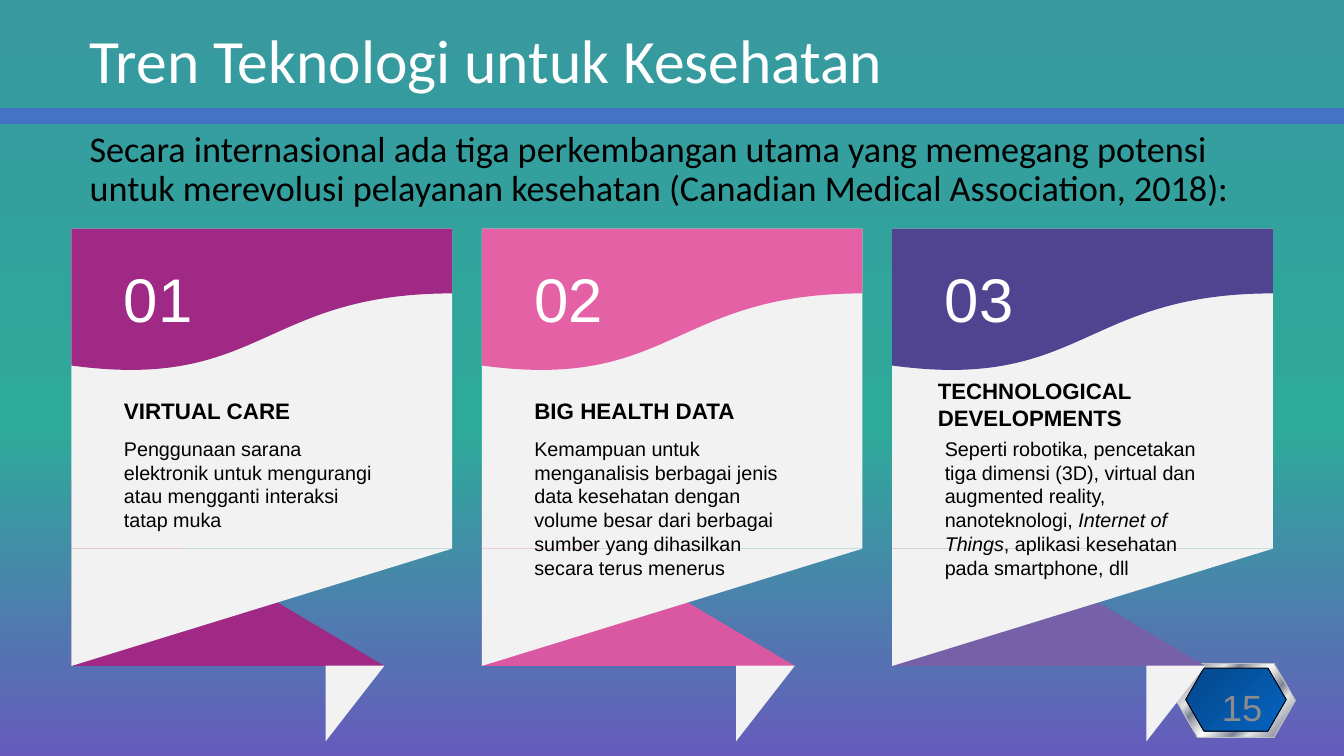
from lxml import etree
from pptx import Presentation
from pptx.dml.color import RGBColor
from pptx.enum.shapes import MSO_SHAPE
from pptx.enum.text import MSO_ANCHOR, MSO_AUTO_SIZE, PP_ALIGN
from pptx.oxml.ns import qn
from pptx.util import Cm, Pt

RECTANGLE, HEXAGON, TRIANGLE = MSO_SHAPE.RECTANGLE, MSO_SHAPE.HEXAGON, MSO_SHAPE.RIGHT_TRIANGLE
TOP, MIDDLE = MSO_ANCHOR.TOP, MSO_ANCHOR.MIDDLE
LEFT, RIGHT = PP_ALIGN.LEFT, PP_ALIGN.RIGHT
NO_AUTOFIT = MSO_AUTO_SIZE.NONE

WHITE = RGBColor(0xFF, 0xFF, 0xFF)
BLACK = RGBColor(0x00, 0x00, 0x00)
GREY = RGBColor(0x8C, 0x8C, 0x8C)
SILVER = RGBColor(0xC0, 0xC0, 0xC0)
PAPER = RGBColor(0xF2, 0xF2, 0xF2)
BLUE = RGBColor(0x44, 0x72, 0xC4)
PURPLE = RGBColor(0x9F, 0x29, 0x84)
PINK = RGBColor(0xE5, 0x61, 0xA6)
DARK_PINK = RGBColor(0xDA, 0x57, 0xA1)
INDIGO = RGBColor(0x50, 0x44, 0x90)
LILAC = RGBColor(0x76, 0x60, 0xA8)
LIGHT_STEEL = RGBColor(0xE6, 0xE6, 0xE6)
DARK_STEEL = RGBColor(0x7D, 0x84, 0x96)
NAVY = RGBColor(0x04, 0x47, 0x8A)
ROYAL = RGBColor(0x05, 0x63, 0xC1)

BACKGROUND = [(0, RGBColor(0x38, 0x99, 0x9F)), (57, RGBColor(0x2D, 0xAA, 0x9A)),
              (100, RGBColor(0x66, 0x5B, 0xBC))]
STEEL = [(0, LIGHT_STEEL), (8, DARK_STEEL), (26, LIGHT_STEEL), (34, DARK_STEEL),
         (46, LIGHT_STEEL), (50, WHITE), (54, LIGHT_STEEL), (66, DARK_STEEL),
         (74, LIGHT_STEEL), (92, DARK_STEEL), (100, LIGHT_STEEL)]

CARD_LEFT, CARD_PITCH, CARD_WIDTH = 2.04, 11.72, 10.87
CARD_TOP, CARD_SIDE, CARD_BOTTOM = 6.53, 15.67, 19.02
WAVE_RIGHT, WAVE_DIP, WAVE_LOWEST, WAVE_LEFT = 8.38, 11.18, 10.57, 10.44
TEXT_INDENT = 1.25


def write(frame, text, size, color, font="Arial", bold=False, align=LEFT,
          anchor=TOP, wrap=True, spacing=1.0):
    """Fill a text frame; every second part of text split by * is italic."""
    frame.word_wrap = wrap
    frame.auto_size = NO_AUTOFIT
    frame.vertical_anchor = anchor
    paragraph = frame.paragraphs[0]
    paragraph.alignment = align
    paragraph.line_spacing = spacing
    for index, part in enumerate(text.split("*")):
        run = paragraph.add_run()
        run.text = part
        run.font.name, run.font.size, run.font.bold = font, Pt(size), bold
        run.font.italic = index % 2 == 1
        run.font.color.rgb = color


def set_gradient(owner, fill, stops, angle):
    """Give the fill of a slide or shape any number of (percent, colour) stops."""
    fill.gradient()
    gradient = owner.element.find(".//" + qn("a:gradFill"))
    stop_list = gradient.find(qn("a:gsLst"))
    for stop in list(stop_list):
        stop_list.remove(stop)
    for percent, color in stops:
        stop = etree.SubElement(stop_list, qn("a:gs"), pos=str(percent * 1000))
        etree.SubElement(stop, qn("a:srgbClr"), val=str(color))
    gradient.find(qn("a:lin")).set("ang", str(angle * 60000))


def curve_last_lines(shape, points):
    """Turn the last two lines of a freeform into one cubic curve through points."""
    lines = shape.element.findall(".//" + qn("a:lnTo"))[-2:]
    curve = etree.Element(qn("a:cubicBezTo"))
    for x, y in points:
        etree.SubElement(curve, qn("a:pt"), x=str(Cm(x) - shape.left), y=str(Cm(y) - shape.top))
    lines[0].addprevious(curve)
    for line in lines:
        line.getparent().remove(line)


class TrendSlide:
    def __init__(self, presentation):
        self.slide = presentation.slides.add_slide(presentation.slide_layouts[5])
        self.shapes = self.slide.shapes
        set_gradient(self.slide, self.slide.background.fill, BACKGROUND, 90)

    def begin_group(self):
        self.shapes = self.slide.shapes.add_group_shape().shapes

    def end_group(self):
        self.shapes = self.slide.shapes

    def title(self, text, left, top, width, height, **style):
        title = self.slide.shapes.title
        title.left, title.top, title.width, title.height = map(Cm, (left, top, width, height))
        write(title.text_frame, text, **style)

    def text(self, text, left, top, width, height, **style):
        box = self.shapes.add_textbox(Cm(left), Cm(top), Cm(width), Cm(height))
        write(box.text_frame, text, **style)

    def shape(self, kind, left, top, width, height, color, rotation=0, flip=False):
        shape = self.shapes.add_shape(kind, Cm(left), Cm(top), Cm(width), Cm(height))
        self.paint(shape, color)
        shape.rotation = rotation
        if flip:
            shape.element.spPr.find(qn("a:xfrm")).set("flipV", "1")
        return shape

    def paint(self, shape, color):
        shape.shadow.inherit = False
        shape.fill.solid()
        shape.fill.fore_color.rgb = color
        shape.line.fill.background()

    def hexagon(self, left, top, width, height, stops, outline):
        hexagon = self.shape(HEXAGON, left, top, width, height, WHITE)
        hexagon.adjustments[0], hexagon.adjustments[1] = 0.289, 1.155
        set_gradient(hexagon, hexagon.fill, stops, 45)
        hexagon.line.color.rgb = outline
        hexagon.line.width = Pt(0.75)

    def wave(self, left, color):
        right, middle = left + CARD_WIDTH, left + CARD_WIDTH / 2
        corners = [(right, CARD_TOP), (right, WAVE_RIGHT), (middle, WAVE_LOWEST), (left, WAVE_LEFT)]
        builder = self.shapes.build_freeform(Cm(left), Cm(CARD_TOP), scale=1.0)
        builder.add_line_segments([(Cm(x), Cm(y)) for x, y in corners])
        wave = builder.convert_to_shape()
        curve_last_lines(wave, [(middle, WAVE_RIGHT), (middle, WAVE_DIP), (left, WAVE_LEFT)])
        self.paint(wave, color)

    def card(self, left, number, heading, heading_box, body, body_height, color, fold_color):
        self.begin_group()
        text_left = left + TEXT_INDENT
        heading_shift, heading_top, heading_width, heading_height, heading_size = heading_box
        self.shape(TRIANGLE, left, 13.72, 8.94, CARD_BOTTOM - 13.72, fold_color)
        self.shape(RECTANGLE, left, CARD_TOP, CARD_WIDTH, CARD_SIDE - CARD_TOP, PAPER)
        self.wave(left, color)
        self.shape(TRIANGLE, left, CARD_SIDE, CARD_WIDTH, CARD_BOTTOM - CARD_SIDE,
                   PAPER, flip=True)
        self.text(number, text_left, 7.34, 2.5, 2.39, size=49.9, color=WHITE, wrap=False)
        self.text(heading, text_left + heading_shift, heading_top, heading_width,
                  heading_height, size=heading_size, color=BLACK, bold=True)
        self.text(body, text_left, 12.35, 7.7, body_height, size=16, color=BLACK)
        self.shape(TRIANGLE, left + 7.02, 19.25, 2.16, 1.68, PAPER, rotation=90)
        self.end_group()


def main():
    presentation = Presentation()
    presentation.slide_width, presentation.slide_height = Cm(38.38), Cm(21.59)
    trends = TrendSlide(presentation)

    trends.shape(RECTANGLE, 0, 3.09, 38.38, 0.46, BLUE)
    trends.begin_group()
    trends.hexagon(33.59, 18.95, 3.4, 2.11, STEEL, SILVER)
    trends.hexagon(33.86, 19.08, 2.87, 1.8, [(0, NAVY), (100, ROYAL)], BLACK)
    trends.end_group()

    one_line, two_lines = (0, 11.23, 7.32, 1.04, 18.1), (-0.2, 10.65, 10.46, 1.8, 18)
    cards = [
        ("01", "VIRTUAL CARE", one_line,
         "Penggunaan sarana elektronik untuk mengurangi atau mengganti interaksi tatap muka",
         3, PURPLE, PURPLE),
        ("02", "BIG HEALTH DATA", one_line,
         "Kemampuan untuk menganalisis berbagai jenis data kesehatan dengan volume besar "
         "dari berbagai sumber yang dihasilkan secara terus menerus",
         4.37, PINK, DARK_PINK),
        ("03", "TECHNOLOGICAL DEVELOPMENTS", two_lines,
         "Seperti robotika, pencetakan tiga dimensi (3D), virtual dan augmented reality, "
         "nanoteknologi, *Internet of Things*, aplikasi kesehatan pada smartphone, dll",
         5.05, INDIGO, LILAC),
    ]
    for index, card in enumerate(cards):
        trends.card(CARD_LEFT + index * CARD_PITCH, *card)

    trends.text("Secara internasional ada tiga perkembangan utama yang memegang potensi untuk "
                "merevolusi pelayanan kesehatan (Canadian Medical Association, 2018):",
                2.31, 3.61, 33.1, 2.67, size=29.3, color=BLACK, font="Calibri", spacing=0.9)
    trends.title("Tren Teknologi untuk Kesehatan", 2.31, -0.28, 33.1, 4.17, size=49.8,
                 color=WHITE, font="Calibri", anchor=MIDDLE, spacing=0.9)
    trends.text("15", 33.58, 19.61, 2.72, 1.14, size=29.5, color=GREY, align=RIGHT,
                anchor=MIDDLE)
    presentation.save("out.pptx")


if __name__ == "__main__":
    main()
